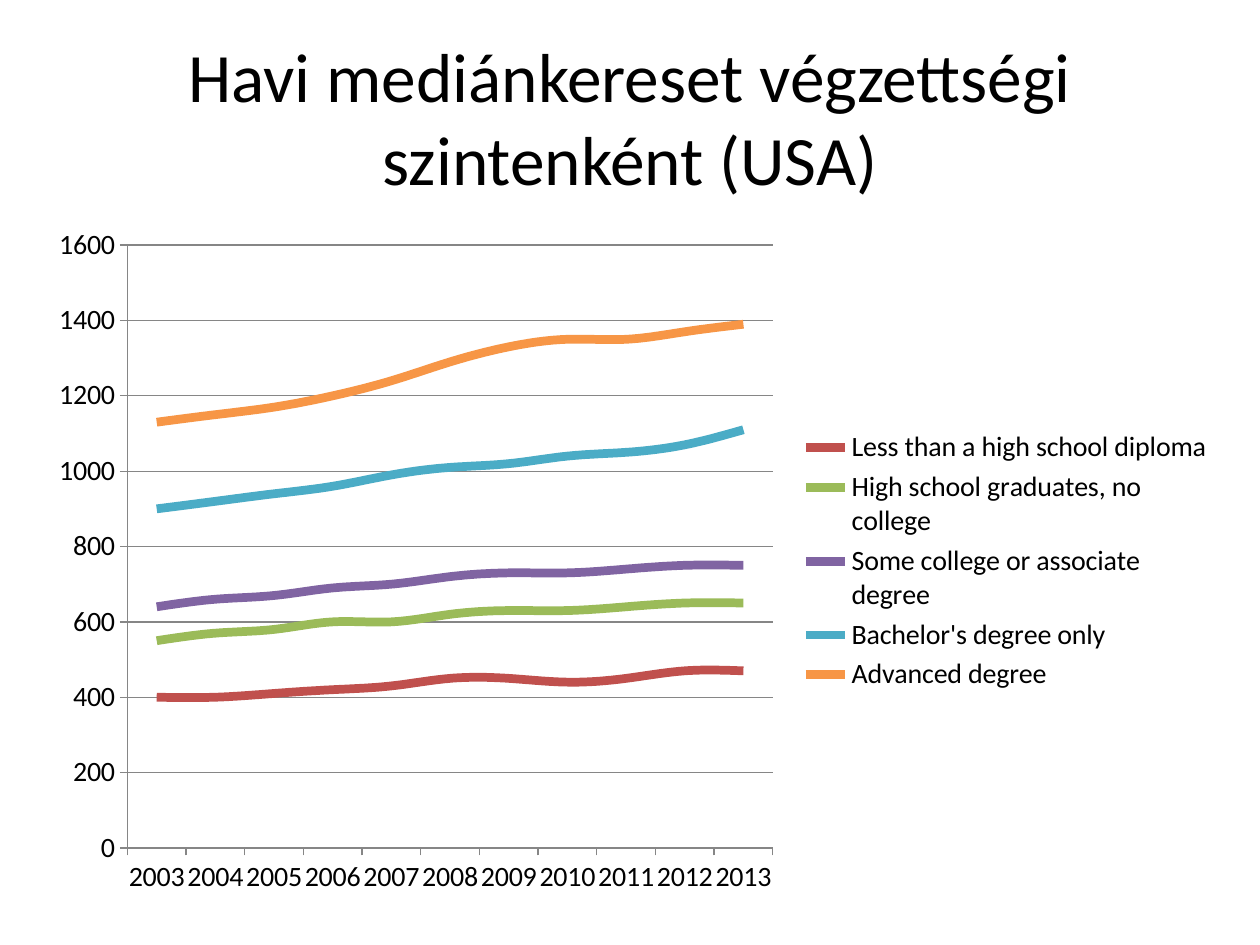
import pptx
import pptx.chart.data
import pptx.dml.color
import pptx.enum.chart
import pptx.enum.text
import pptx.util
from pptx.util import Inches, Pt

RGBColor = pptx.dml.color.RGBColor
BLACK = RGBColor(0x00, 0x00, 0x00)
GRAY = RGBColor(0x86, 0x86, 0x86)
RED = RGBColor(0xC0, 0x50, 0x4D)
GREEN = RGBColor(0x9B, 0xBB, 0x59)
PURPLE = RGBColor(0x80, 0x64, 0xA2)
BLUE = RGBColor(0x4B, 0xAC, 0xC6)
ORANGE = RGBColor(0xF7, 0x96, 0x46)

EARNINGS = [
    ("Less than a high school diploma", RED,
     (400, 400, 410, 420, 430, 450, 450, 440, 450, 470, 470)),
    ("High school graduates, no college", GREEN,
     (550, 570, 580, 600, 600, 620, 630, 630, 640, 650, 650)),
    ("Some college or associate degree", PURPLE,
     (640, 660, 670, 690, 700, 720, 730, 730, 740, 750, 750)),
    ("Bachelor's degree only", BLUE,
     (900, 920, 940, 960, 990, 1010, 1020, 1040, 1050, 1070, 1110)),
    ("Advanced degree", ORANGE,
     (1130, 1150, 1170, 1200, 1240, 1290, 1330, 1350, 1350, 1370, 1390)),
]

prs = pptx.Presentation()
prs.slide_width, prs.slide_height = Inches(10), Inches(7.5)
s = prs.slides.add_slide(prs.slide_layouts[5])

# Title
title = s.shapes.title
title.left, title.top = Inches(0.5), Inches(0.3)
title.width, title.height = Inches(9), Inches(1.25)
tf = title.text_frame
tf.text = "Havi mediánkereset végzettségi szintenként (USA)"
tf.vertical_anchor = pptx.enum.text.MSO_ANCHOR.MIDDLE
p = tf.paragraphs[0]
p.alignment = pptx.enum.text.PP_ALIGN.CENTER
font = p.runs[0].font
font.name, font.size = "Calibri", Pt(39.6)
font.color.rgb = BLACK

# Earnings chart
data = pptx.chart.data.CategoryChartData(number_format="#0")
data.categories = [str(year) for year in range(2003, 2014)]
for name, _, values in EARNINGS:
    data.add_series(name, values)
chart = s.shapes.add_chart(
    pptx.enum.chart.XL_CHART_TYPE.LINE,
    Inches(0.28), Inches(1.7), Inches(9.45), Inches(5.51), data).chart
chart.has_title = False
chart.font.name, chart.font.size = "Calibri", Pt(16)
chart.font.color.rgb = BLACK

chart.has_legend = True
chart.legend.position = pptx.enum.chart.XL_LEGEND_POSITION.RIGHT
chart.legend.include_in_layout = False

plot = chart.plots[0]
plot.vary_by_categories = False
for series, (_, color, _) in zip(plot.series, EARNINGS):
    series.smooth = True
    series.marker.style = pptx.enum.chart.XL_MARKER_STYLE.NONE
    series.format.line.color.rgb = color
    series.format.line.width = Pt(5)

for axis in (chart.category_axis, chart.value_axis):
    axis.major_tick_mark = pptx.enum.chart.XL_TICK_MARK.OUTSIDE
    axis.format.line.color.rgb = GRAY
    axis.format.line.width = Pt(0.75)

value_axis = chart.value_axis
value_axis.minimum_scale, value_axis.maximum_scale = 0, 1600
value_axis.major_unit = 200
value_axis.tick_labels.number_format = "#0"
value_axis.tick_labels.number_format_is_linked = False
value_axis.has_major_gridlines = True
value_axis.major_gridlines.format.line.color.rgb = GRAY
value_axis.major_gridlines.format.line.width = Pt(0.75)

prs.save("out.pptx")
